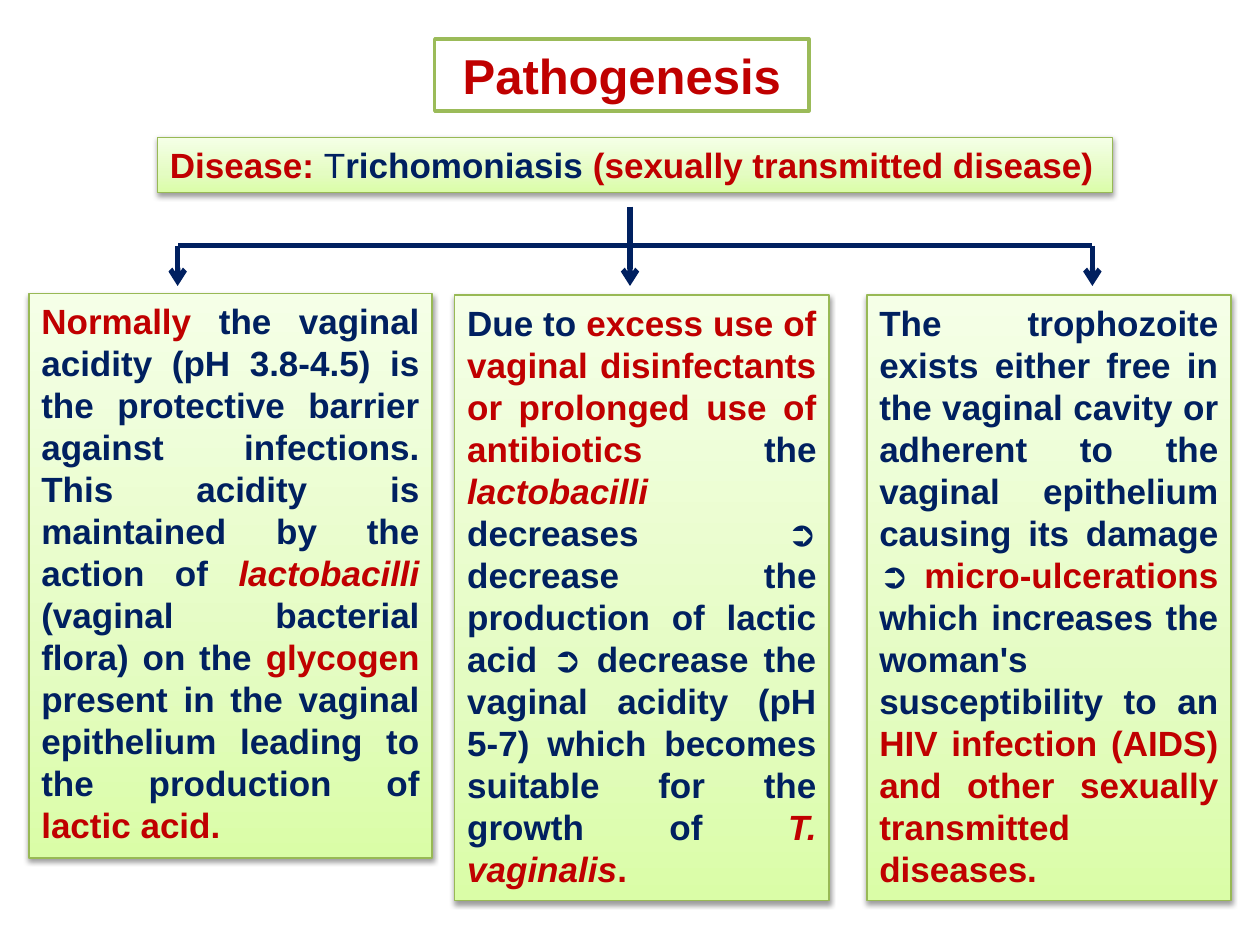
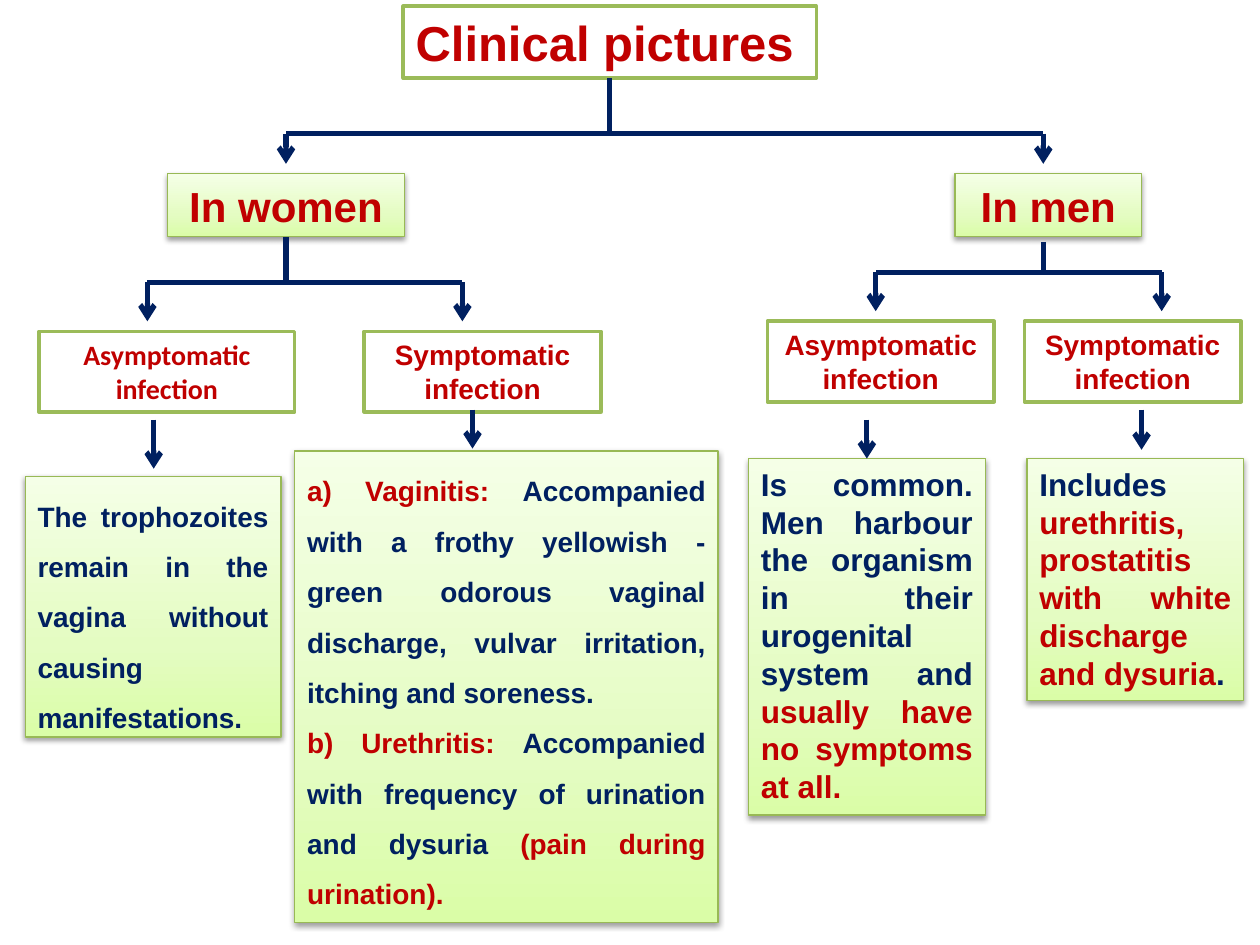
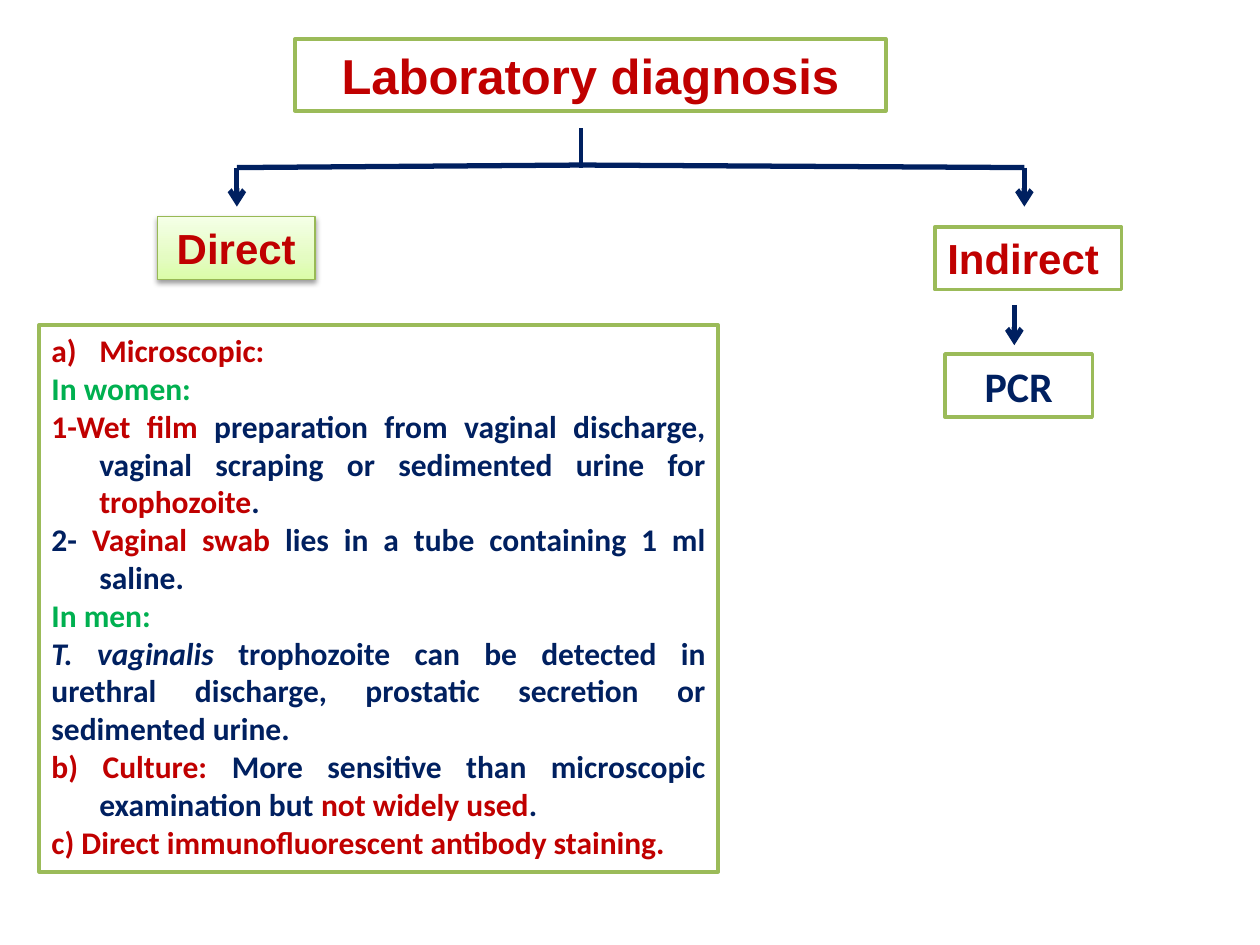
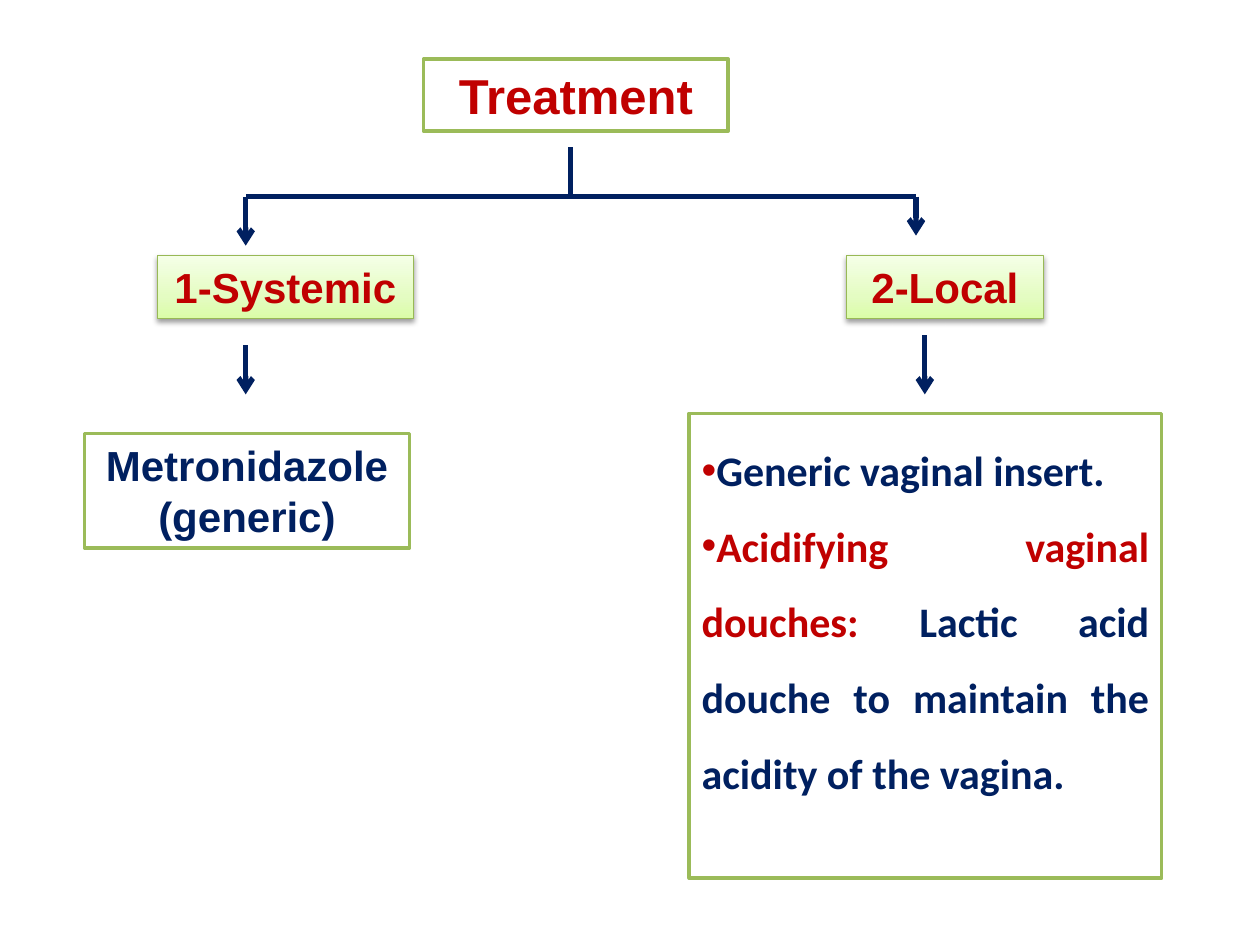
import copy
import lxml.etree
import pptx
import pptx.dml.color
import pptx.enum.shapes
import pptx.enum.text
import pptx.oxml.ns
import pptx.util

RED = pptx.dml.color.RGBColor(0xC0, 0x00, 0x00)
NAVY = pptx.dml.color.RGBColor(0x00, 0x20, 0x60)
GREEN = pptx.dml.color.RGBColor(0x00, 0xB0, 0x50)
WHITE = pptx.dml.color.RGBColor(0xFF, 0xFF, 0xFF)
EDGE = pptx.dml.color.RGBColor(0x9B, 0xBB, 0x59)
RIM = pptx.dml.color.RGBColor(0x98, 0xB9, 0x55)
FADE = [
    (0, pptx.dml.color.RGBColor(0xDA, 0xFD, 0xA7)),
    (0.35, pptx.dml.color.RGBColor(0xE4, 0xFC, 0xC2)),
    (1, pptx.dml.color.RGBColor(0xF5, 0xFF, 0xE7)),
]
LEFT = pptx.enum.text.PP_ALIGN.LEFT
MID = pptx.enum.text.PP_ALIGN.CENTER
FULL = pptx.enum.text.PP_ALIGN.JUSTIFY
qn = pptx.oxml.ns.qn


def box(page, place, paras, size, soft=False, align=MID, font="Arial", space=None):
    rect = page.shapes.add_shape(
        pptx.enum.shapes.MSO_SHAPE.RECTANGLE, *[pptx.util.Inches(n) for n in place]
    )
    rect.shadow.inherit = False
    rect.line.color.rgb = RIM if soft else EDGE
    rect.line.width = pptx.util.Pt(0.75 if soft else 2)
    if soft:
        rect.fill.gradient()
        rect.fill.gradient_angle = 90
        stops = rect.element.spPr.find(".//" + qn("a:gsLst"))
        stops.append(copy.deepcopy(stops[0]))
        for stop, (spot, tint) in zip(rect.fill.gradient_stops, FADE):
            stop.position = spot
            stop.color.rgb = tint
        glow = lxml.etree.SubElement(
            rect.element.spPr.find(qn("a:effectLst")), qn("a:outerShdw"),
            blurRad="40000", dist="20000", dir="5400000", rotWithShape="0",
        )
        tone = lxml.etree.SubElement(glow, qn("a:srgbClr"), val="000000")
        lxml.etree.SubElement(tone, qn("a:alpha"), val="38000")
    else:
        rect.fill.solid()
        rect.fill.fore_color.rgb = WHITE
    frame = rect.text_frame
    frame.word_wrap = True
    frame.vertical_anchor = pptx.enum.text.MSO_ANCHOR.TOP
    for num, runs in enumerate(paras):
        para = frame.add_paragraph() if num else frame.paragraphs[0]
        para.alignment = align
        if space:
            para.line_spacing = space
        para.font.name = font
        para.font.size = pptx.util.Pt(size)
        para.font.bold = True
        for text, tint, *slant in runs:
            run = para.add_run()
            run.text = text
            owner = para if len(runs) == 1 else run
            owner.font.color.rgb = tint
            if slant:
                run.font.italic = True
    return rect


def line(page, start, end, head=False, width=3):
    wire = page.shapes.add_connector(
        pptx.enum.shapes.MSO_CONNECTOR.STRAIGHT,
        *[pptx.util.Inches(n) for n in (*start, *end)],
    )
    wire.line.color.rgb = NAVY
    wire.line.width = pptx.util.Pt(width)
    if head:
        lxml.etree.SubElement(
            wire.element.spPr.find(qn("a:ln")), qn("a:tailEnd"), type="arrow"
        )
    lxml.etree.SubElement(wire.element.spPr, qn("a:effectLst"))
    return wire


deck = pptx.Presentation()
deck.slide_width = pptx.util.Inches(10)
deck.slide_height = pptx.util.Inches(7.5)
cause, signs, labs, cure = [
    deck.slides.add_slide(deck.slide_layouts[6]) for _ in range(4)
]

heads = [
    box(page, place, [[(text, RED)]], 28, align=align)
    for page, place, text, align in [
        (cause, (3.45, 0.31, 2.97, 0.57), "Pathogenesis", MID),
        (signs, (3.2, 0.05, 3.28, 0.57), "Clinical pictures", LEFT),
        (labs, (2.34, 0.31, 4.69, 0.57), "Laboratory diagnosis", MID),
        (cure, (3.36, 0.47, 2.42, 0.57), "Treatment", MID),
    ]
]

women, men, direct, whole, local = [
    box(page, place, [[(text, RED)]], 24, soft=True)
    for page, place, text in [
        (signs, (1.33, 1.38, 1.88, 0.5), "In women"),
        (signs, (7.58, 1.38, 1.48, 0.5), "In men"),
        (labs, (1.25, 1.72, 1.25, 0.5), "Direct"),
        (cure, (1.25, 2.03, 2.03, 0.5), "1-Systemic"),
        (cure, (6.72, 2.03, 1.56, 0.5), "2-Local"),
    ]
]

name = box(cause, (1.25, 1.09, 7.58, 0.44), [[
    ("Disease: ", RED), ("T", NAVY), ("richomoniasis ", NAVY),
    ("(sexually transmitted disease)", RED),
]], 20, soft=True, align=LEFT)
name.text_frame.paragraphs[0].runs[1].font.bold = False

for place, runs in [
    ((0.23, 2.33, 3.2, 4.48), [
        ("Normally", RED),
        (" the vaginal acidity (pH 3.8-4.5) is the protective barrier against infections. "
         "This acidity is maintained by the action of ", NAVY),
        ("lactobacilli", RED, True),
        (" (vaginal bacterial flora) on the ", NAVY),
        ("glycogen", RED),
        (" present in the vaginal epithelium leading to the production of ", NAVY),
        ("lactic acid.", RED),
    ]),
    ((3.61, 2.34, 2.97, 4.81), [
        ("Due to ", NAVY),
        ("excess use of vaginal disinfectants or prolonged use of antibiotics ", RED),
        ("the ", NAVY),
        ("lactobacilli ", RED, True),
        ("decreases ➲ decrease the production of lactic acid ➲ decrease the vaginal "
         "acidity (pH 5-7) which becomes suitable for the growth of ", NAVY),
        ("T. vaginalis", RED, True),
        (".", RED),
    ]),
    ((6.88, 2.34, 2.89, 4.81), [
        ("The trophozoite exists either free in the vaginal cavity or adherent to the "
         "vaginal epithelium causing its damage ➲ ", NAVY),
        ("micro-ulcerations ", RED),
        ("which increases the woman's susceptibility to an ", NAVY),
        ("HIV infection (AIDS) and other sexually transmitted diseases.", RED),
    ]),
]:
    box(cause, place, [runs], 20, soft=True, align=FULL)

for place, kind, font in [
    ((0.31, 2.63, 2.03, 0.64), "Asymptomatic", "Calibri"),
    ((2.89, 2.63, 1.88, 0.64), "Symptomatic", "Arial"),
    ((6.09, 2.55, 1.8, 0.64), "Asymptomatic", "Arial"),
    ((8.13, 2.55, 1.72, 0.64), "Symptomatic", "Arial"),
]:
    box(signs, place, [[(kind + " infection", RED)]], 16, font=font)

silent, vulvar, common, mixed = [
    box(signs, place, paras, size, soft=True, align=FULL, space=space)
    for place, size, space, paras in [
        ((0.2, 3.78, 2.03, 2.07), 16, 1.5, [[
            ("The trophozoites remain in the vagina without causing manifestations.", NAVY),
        ]]),
        ((2.34, 3.58, 3.36, 3.74), 16, 1.5, [
            [("a) Vaginitis: ", RED),
             ("Accompanied with a frothy yellowish - green odorous vaginal discharge, "
              "vulvar irritation, itching and soreness.", NAVY)],
            [("b) Urethritis: ", RED),
             ("Accompanied with frequency of urination and dysuria ", NAVY),
             ("(pain during urination).", RED)],
        ]),
        ((5.94, 3.64, 1.88, 2.83), 18, None, [[
            ("Is common. Men harbour the organism in their urogenital system and ", NAVY),
            ("usually have no symptoms at all.", RED),
        ]]),
        ((8.15, 3.64, 1.72, 1.92), 18, None, [[
            ("Includes ", NAVY),
            ("urethritis, prostatitis with white discharge and dysuria", RED),
            (".", NAVY),
        ]]),
    ]
]

box(labs, (7.42, 1.8, 1.48, 0.5), [[("Indirect", RED)]], 24, align=LEFT)
box(labs, (7.5, 2.81, 1.17, 0.5), [[("PCR", NAVY)]], 24, font="Calibri")
tests = box(labs, (0.31, 2.58, 5.39, 4.34), [
    [("Microscopic:", RED)],
    [("In women:", GREEN)],
    [("1-Wet film ", RED),
     ("preparation from vaginal discharge, vaginal scraping or sedimented urine for ", NAVY),
     ("trophozoite", RED), (".", NAVY)],
    [("2- ", NAVY), ("Vaginal swab ", RED),
     ("lies in a tube containing 1 ml saline.", NAVY)],
    [("In men:", GREEN)],
    [("T. vaginalis ", NAVY, True),
     ("trophozoite can be detected in urethral discharge, prostatic secretion or "
      "sedimented urine.", NAVY)],
    [("b) Culture: ", RED), ("More sensitive than microscopic examination but ", NAVY),
     ("not widely used", RED), (".", NAVY)],
    [("c) Direct immunofluorescent antibody staining.", RED)],
], 18, align=FULL, font="Calibri")
hang = pptx.util.Inches(0.38)
for num, para in enumerate(tests.text_frame.paragraphs):
    if num != 5:
        props = para._p.get_or_add_pPr()
        props.set("marL", str(hang))
        props.set("indent", str(-hang))
first = tests.text_frame.paragraphs[0]._p.pPr
mark = lxml.etree.Element(qn("a:buAutoNum"), type="alphaLcParenR")
first.find(qn("a:defRPr")).addprevious(mark)

box(cure, (0.67, 3.44, 2.58, 0.91), [[("Metronidazole (generic)", NAVY)]], 24)
doses = box(cure, (5.47, 3.28, 3.75, 3.69), [
    [("Generic vaginal insert.", NAVY)],
    [("Acidifying vaginal douches:", RED),
     (" Lactic acid douche to maintain the acidity of the vagina.", NAVY)],
], 24, align=FULL, font="Calibri", space=1.5)
for para in doses.text_frame.paragraphs:
    base = para._p.pPr.find(qn("a:defRPr"))
    tint = lxml.etree.Element(qn("a:buClr"))
    lxml.etree.SubElement(tint, qn("a:srgbClr"), val=str(RED))
    base.addprevious(tint)
    base.addprevious(lxml.etree.Element(qn("a:buFont"), typeface="Arial"))
    base.addprevious(lxml.etree.Element(qn("a:buChar"), char="•"))

for page, root, stem, top, hub, bar, width, tips in [
    (cause, None, 5, 1.64, 1.95, 1.95, 3, [(1.41, 2.27), (5, 2.27), (8.67, 2.27)]),
    (signs, heads[1], 4.84, 0.62, 1.06, 1.06, 3, [(2.27, 1.3), (8.28, 1.3)]),
    (signs, women, 2.27, 1.88, 2.24, 2.24, 3, [(1.17, 2.55), (3.67, 2.55)]),
    (signs, None, 8.28, 1.92, 2.16, 2.16, 3, [(6.95, 2.47), (9.22, 2.47)]),
    (labs, None, 4.61, 1.02, 1.31, 1.33, 2.25, [(1.88, 1.64), (8.13, 1.64)]),
    (cure, None, 4.53, 1.17, 1.56, 1.56, 3, [(1.95, 1.95), (7.27, 1.87)]),
]:
    trunk = line(page, (stem, top), (stem, bar), width=width)
    if root:
        trunk.begin_connect(root, 2)
    for x, tip in tips:
        if x != stem:
            line(page, (stem, hub), (x, bar))
        line(page, (x, bar), (x, tip), head=True)

for page, x, top, tip, goal in [
    (signs, 1.22, 3.33, 3.72, None),
    (signs, 3.75, 3.25, 3.56, None),
    (signs, 6.88, 3.33, 3.64, common),
    (signs, 9.06, 3.25, 3.57, None),
    (labs, 8.05, 2.42, 2.74, None),
    (cure, 1.95, 2.74, 3.13, None),
    (cure, 7.34, 2.66, 3.13, None),
]:
    drop = line(page, (x, top), (x, tip), head=True)
    if goal:
        drop.end_connect(goal, 0)

deck.save("out.pptx")
